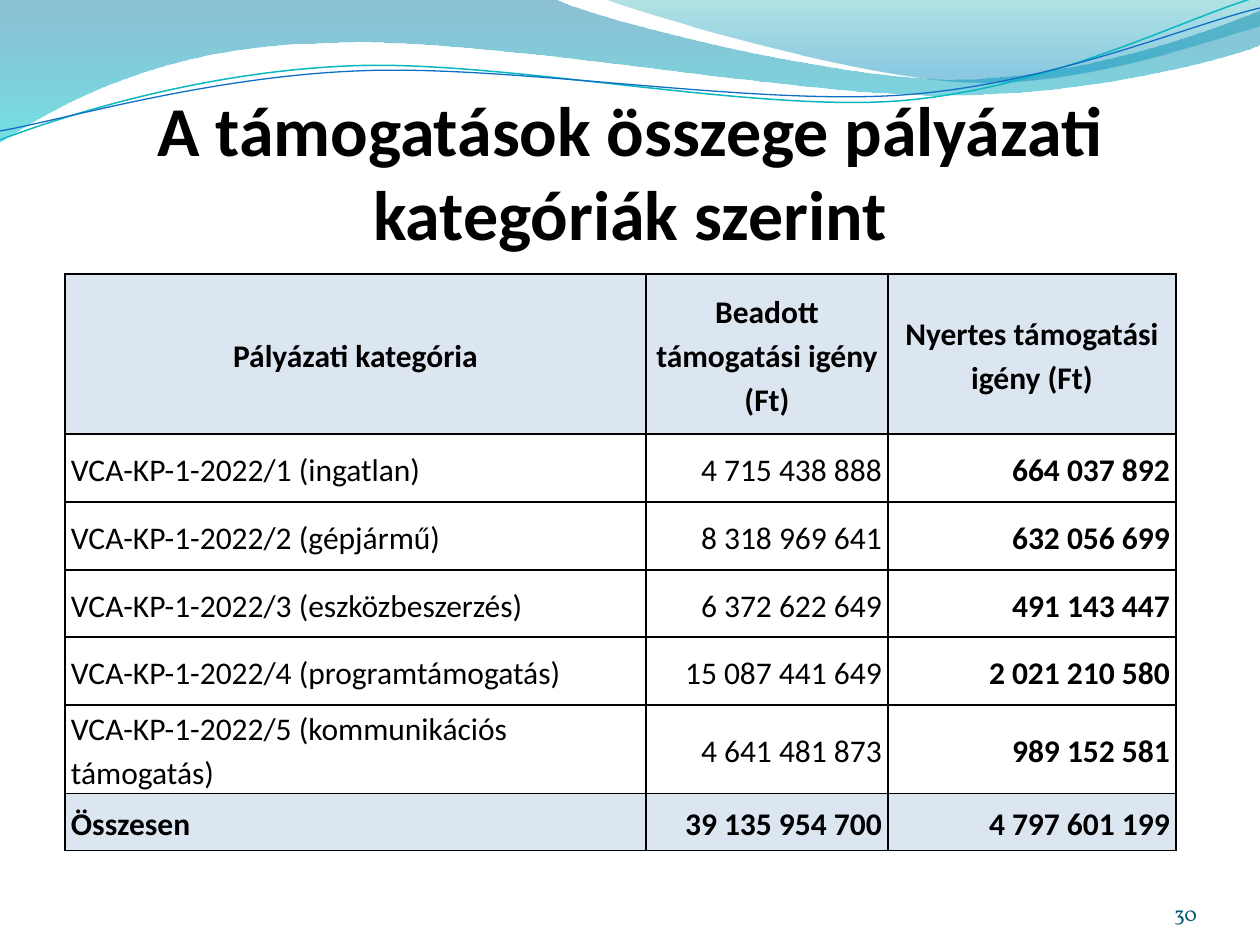
"""Build the slide on grant amounts by application category."""
from math import cos, radians, sin
from lxml.etree import SubElement
from pptx import Presentation
from pptx.dml.color import RGBColor
from pptx.enum.text import MSO_ANCHOR, MSO_AUTO_SIZE, PP_ALIGN
from pptx.oxml.ns import qn
from pptx.util import Emu, Pt

BLACK = RGBColor(0x00, 0x00, 0x00)
PALE_BLUE = RGBColor(0xDC, 0xE6, 0xF1)
DARK_TEAL = RGBColor(0x04, 0x5D, 0x75)
TEAL = RGBColor(0x0A, 0xB8, 0xBF)
BLUE = RGBColor(0x0F, 0x6F, 0xC6)

TITLE = "A támogatások összege pályázati kategóriák szerint"
PAGE = "30"
ROWS = [
    ("Pályázati kategória", "Beadott támogatási igény (Ft)", "Nyertes támogatási igény (Ft)"),
    ("VCA-KP-1-2022/1 (ingatlan)", "4 715 438 888", "664 037 892"),
    ("VCA-KP-1-2022/2 (gépjármű)", "8 318 969 641", "632 056 699"),
    ("VCA-KP-1-2022/3 (eszközbeszerzés)", "6 372 622 649", "491 143 447"),
    ("VCA-KP-1-2022/4 (programtámogatás)", "15 087 441 649", "2 021 210 580"),
    ("VCA-KP-1-2022/5 (kommunikációs támogatás)", "4 641 481 873", "989 152 581"),
    ("Összesen", "39 135 954 700", "4 797 601 199"),
]
COL_WIDTHS = [581, 242, 288]
ROW_HEIGHTS = [160, 68, 68, 67, 68, 68, 57]

WAVES = [
    {"box": (-1, -1, 1262, 143), "angle": 0,
     "path": [(0, 0), (554, -1), (600, 21, 837, 79, 955, 79), (1074, 79, 1207, 33, 1260, 11),
              (1261, 45), (1238, 55, 1096, 96, 940, 95), (784, 95, 481, 35, 324, 43),
              (163, 45, 58, 105, -1, 142), (0, 0)],
     "stops": [(0, RGBColor(0x00, 0x74, 0xA1), 45), (1, RGBColor(0x00, 0xC6, 0xCF), 55)]},
    {"box": (604, -1, 656, 88), "angle": 0,
     "path": [(604, -1), (641, 14, 859, 78, 969, 82), (1079, 87, 1211, 40, 1260, 26),
              (1260, 0), (604, -1)],
     "stops": [(0, RGBColor(0x00, 0xA1, 0xA9), 30), (0.8, RGBColor(0x00, 0x8B, 0xBF), 45)]},
    {"box": (-3, 28, 1263, 89), "angle": -2.7,
     "path": [(0, 140), (60, 117, 199, 72, 349, 66), (498, 59, 747, 112, 898, 101),
              (1050, 89, 1182, 19, 1257, -3)],
     "line": (TEAL, 0.85)},
    {"box": (-3, 38, 1264, 73), "angle": -2.7,
     "path": [(0, 131), (59, 121, 207, 77, 357, 71), (508, 64, 752, 106, 903, 95),
              (1053, 84, 1185, 26, 1260, 8)],
     "line": (BLUE, 0.75)},
]


def px(n):
    return Emu(round(n * 914400 / 126))


def place(sp, *box):
    sp.left, sp.top, sp.width, sp.height = map(px, box)


def to_local(x, y, box, angle):
    """Turn a slide point into the coordinates of a rotated box."""
    left, top, width, height = box
    dx, dy = x - left - width / 2, y - top - height / 2
    a = radians(-angle)
    return (px(dx * cos(a) - dy * sin(a) + width / 2),
            px(dx * sin(a) + dy * cos(a) + height / 2))


def draw_path(sp, wave):
    """Write the path of a wave as straight and Bézier steps."""
    path = next(sp._element.iter(qn("a:path")))
    for child in list(path):
        path.remove(child)
    path.set("w", str(sp.width))
    path.set("h", str(sp.height))
    for i, step in enumerate(wave["path"]):
        tag = "a:moveTo" if i == 0 else "a:lnTo" if len(step) == 2 else "a:cubicBezTo"
        node = SubElement(path, qn(tag))
        for x, y in zip(step[::2], step[1::2]):
            local_x, local_y = to_local(x, y, wave["box"], wave["angle"])
            SubElement(node, qn("a:pt"), x=str(local_x), y=str(local_y))
    if "stops" in wave:
        SubElement(path, qn("a:close"))


def add_wave(shapes, wave):
    ends = [(px(step[-2]), px(step[-1])) for step in wave["path"]]
    builder = shapes.build_freeform(*ends[0])
    builder.add_line_segments(ends[1:], close=False)
    sp = builder.convert_to_shape()
    place(sp, *wave["box"])
    draw_path(sp, wave)
    sp.rotation = wave["angle"]
    sp.shadow.inherit = False
    if "line" in wave:
        color, width = wave["line"]
        sp.fill.background()
        sp.line.color.rgb = color
        sp.line.width = Pt(width)
        return
    sp.line.fill.background()
    sp.fill.gradient()
    sp.fill.gradient_angle = 270
    for stop, (position, color, _) in zip(sp.fill.gradient_stops, wave["stops"]):
        stop.position = position
        stop.color.rgb = color
    colors = sp._element.spPr.iter(qn("a:srgbClr"))
    for clr, (_, _, opacity) in zip(colors, wave["stops"]):
        SubElement(clr, qn("a:alpha"), val=str(opacity * 1000))


def write(tf, text, align, **font):
    p = tf.paragraphs[0]
    p.alignment = align
    r = p.add_run()
    r.text = text
    r.font.color.rgb = font.pop("color", BLACK)
    for name, value in font.items():
        setattr(r.font, name, value)
    return p


def format_frame(tf, **values):
    for name, value in values.items():
        setattr(tf, name, value)


def add_borders(cell):
    tc_pr = cell._tc.get_or_add_tcPr()
    for side in ("lnL", "lnR", "lnT", "lnB"):
        ln = SubElement(tc_pr, qn(f"a:{side}"), w=str(Pt(1)))
        fill = SubElement(ln, qn("a:solidFill"))
        SubElement(fill, qn("a:srgbClr"), val=str(BLACK))


def add_grants_table(shapes):
    frame = shapes.add_table(len(ROWS), len(COL_WIDTHS), px(65), px(274),
                             px(sum(COL_WIDTHS)), px(sum(ROW_HEIGHTS)))
    table = frame.table
    table.first_row = table.horz_banding = False
    for col, width in zip(table.columns, COL_WIDTHS):
        col.width = px(width)
    last = len(ROWS) - 1
    for i, (row, height) in enumerate(zip(table.rows, ROW_HEIGHTS)):
        row.height = px(height)
        shaded = i in (0, last)
        for j, cell in enumerate(row.cells):
            if i == 0:
                align = PP_ALIGN.CENTER
            elif j:
                align = PP_ALIGN.RIGHT
            else:
                align = PP_ALIGN.JUSTIFY if i < last - 1 else PP_ALIGN.LEFT
            format_frame(cell, margin_left=px(6), margin_right=px(6), margin_top=0,
                         margin_bottom=0, vertical_anchor=MSO_ANCHOR.MIDDLE)
            p = write(cell.text_frame, ROWS[i][j], align, name="Calibri", size=Pt(18),
                      bold=shaded or j == 2)
            p.line_spacing = 1.15
            add_borders(cell)
            if shaded:
                cell.fill.solid()
                cell.fill.fore_color.rgb = PALE_BLUE
            else:
                cell.fill.background()


def main():
    prs = Presentation()
    prs.slide_width, prs.slide_height = px(1260), px(945)
    s = prs.slides.add_slide(prs.slide_layouts[5])
    for wave in WAVES:
        add_wave(s.shapes, wave)

    title = s.shapes.title
    s.shapes._spTree.append(title._element)
    place(title, 63, 97, 1134, 158)
    frame_format = dict(margin_left=0, margin_right=0, margin_bottom=0, word_wrap=True,
                        auto_size=MSO_AUTO_SIZE.NONE, vertical_anchor=MSO_ANCHOR.BOTTOM)
    format_frame(title.text_frame, margin_top=px(6), **frame_format)
    write(title.text_frame, TITLE, PP_ALIGN.CENTER, name="Calibri", size=Pt(40), bold=True)

    add_grants_table(s.shapes)

    number = s.shapes.add_textbox(*map(px, (1092, 876, 105, 50)))
    format_frame(number.text_frame, margin_top=0, **frame_format)
    write(number.text_frame, PAGE, PP_ALIGN.RIGHT, name="Vollkorn", size=Pt(12), color=DARK_TEAL)
    prs.save("out.pptx")


if __name__ == "__main__":
    main()
